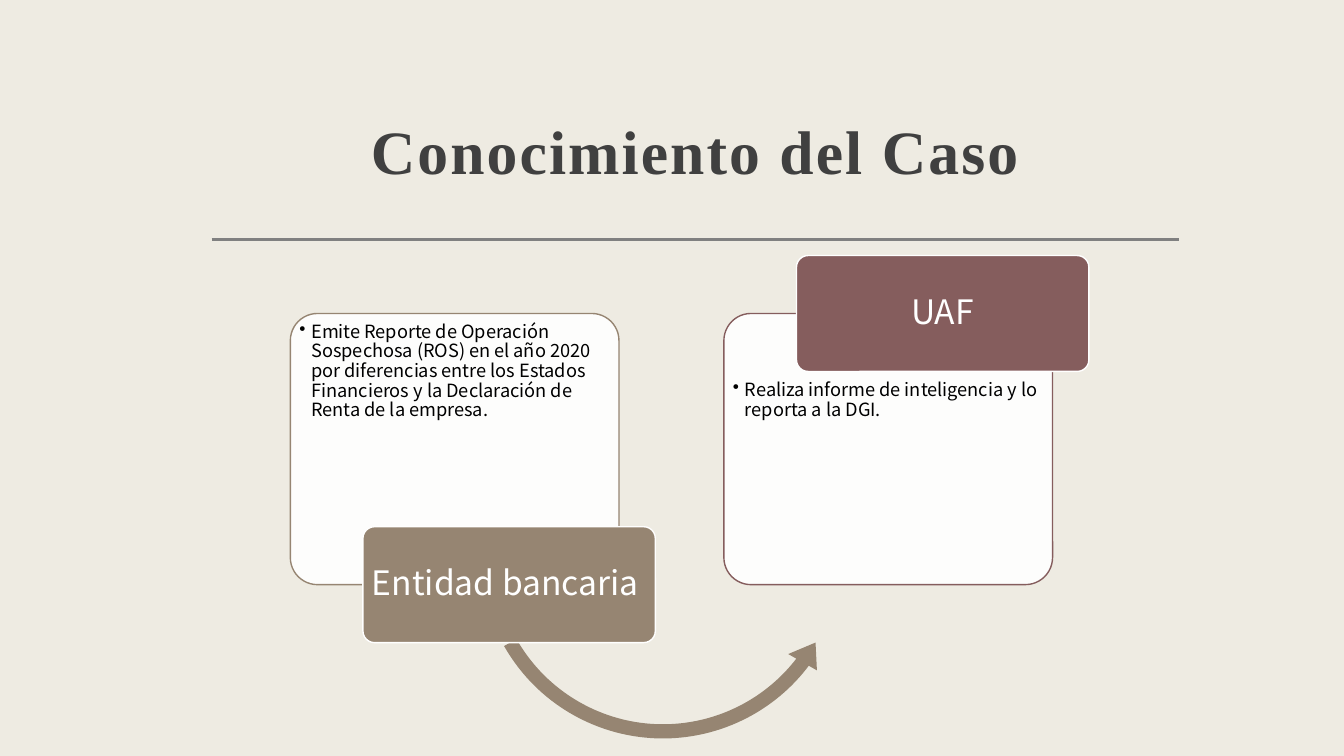
import pptx
import pptx.util
import pptx.dml.color
import pptx.enum.shapes
import pptx.enum.text
import pptx.oxml
import pptx.oxml.ns
import lxml.etree

Inches = pptx.util.Inches
Shape = pptx.enum.shapes.MSO_SHAPE
Align = pptx.enum.text.PP_ALIGN
Anchor = pptx.enum.text.MSO_ANCHOR
BODY_FONT = "Noto Sans CJK JP"
TAUPE, WINE, WHITE = "968572", "855D5D", "FFFFFF"
CARD_WIDTH, CARD_HEIGHT = 3.26, 2.69
LABEL_WIDTH, LABEL_HEIGHT = 2.9, 1.15
LABEL_SHIFT = 0.72


def color(value):
    return pptx.dml.color.RGBColor.from_string(value)


def add_child(parent, tag, **attributes):
    child = lxml.etree.SubElement(parent, pptx.oxml.ns.qn(tag))
    for name, value in attributes.items():
        child.set(name, value)
    return child


def set_frame(frame, margins, anchor):
    frame.word_wrap = True
    frame.auto_size = pptx.enum.text.MSO_AUTO_SIZE.NONE
    frame.vertical_anchor = anchor
    frame.margin_left, frame.margin_top, frame.margin_right, frame.margin_bottom = map(Inches, margins)


def write(frame, text, size, font, value, align, spacing):
    para = frame.paragraphs[0]
    para.alignment = align
    para.line_spacing = spacing
    span = para.add_run()
    span.text = text
    span.font.size = pptx.util.Pt(size)
    span.font.name = font
    span.font.color.rgb = color(value)
    return para, span


def add_box(page, kind, left, top, width, height, fill, line=None):
    box = page.shapes.add_shape(kind, Inches(left), Inches(top), Inches(width), Inches(height))
    box.shadow.inherit = False
    box.fill.solid()
    box.fill.fore_color.rgb = color(fill)
    if line:
        box.line.color.rgb = color(line)
        box.line.width = pptx.util.Pt(1)
    else:
        box.line.fill.background()
    return box


def add_heading(page, left, top, width, height):
    title = page.shapes.title
    title.left, title.top, title.width, title.height = map(Inches, (left, top, width, height))
    set_frame(title.text_frame, (0.12, 0.12, 0.12, 0.1), Anchor.BOTTOM)
    para, span = write(title.text_frame, "Conocimiento del Caso", 44, "Times New Roman",
                       "404040", Align.CENTER, 1.3)
    span.font.bold = True
    span.font._element.set("spc", "150")
    rule_y = Inches(top + 1.9)
    rule = page.shapes.add_connector(pptx.enum.shapes.MSO_CONNECTOR.STRAIGHT,
                                     Inches(left), rule_y, Inches(left + width), rule_y)
    rule.line.color.rgb = color("808080")
    rule.line.width = pptx.util.Pt(2)
    add_child(rule._element.spPr, "a:effectLst")


def add_card(page, left, top, accent, text, text_top):
    card = add_box(page, Shape.ROUNDED_RECTANGLE, left, top, CARD_WIDTH, CARD_HEIGHT, WHITE, accent)
    card.adjustments[0] = 0.1
    fill = card._element.spPr.find(pptx.oxml.ns.qn("a:solidFill"))
    add_child(fill[0], "a:alpha", val="90000")
    set_frame(card.text_frame, (0.01, text_top, 0.01, 0.01), Anchor.TOP)
    para, span = write(card.text_frame, text, 13, BODY_FONT, "000000", Align.LEFT, 0.9)
    properties = para._p.get_or_add_pPr()
    properties.set("marL", str(Inches(0.12)))
    properties.set("indent", str(Inches(-0.12)))
    add_child(properties, "a:buChar", char="•")


def add_label(page, left, top, accent, text):
    label = add_box(page, Shape.ROUNDED_RECTANGLE, left, top, LABEL_WIDTH, LABEL_HEIGHT, accent, WHITE)
    label.adjustments[0] = 0.1
    set_frame(label.text_frame, (0.05, 0.03, 0.05, 0.03), Anchor.MIDDLE)
    write(label.text_frame, text, 24, BODY_FONT, WHITE, Align.CENTER, 0.9)


def add_stage(page, left, top, accent, text, text_top, name, label_edge):
    add_card(page, left, top, accent, text, text_top)
    add_label(page, left + LABEL_SHIFT, top + label_edge - LABEL_HEIGHT / 2, accent, name)


def add_flow_arrow(page, left, top, size):
    arrow = add_box(page, Shape.LEFT_CIRCULAR_ARROW, left, top, size, size, TAUPE)
    for index, value in enumerate((0.037, 4.618, 22.374, 90.245, 0.043)):
        arrow.adjustments[index] = value


def main():
    deck = pptx.Presentation()
    deck.slide_width, deck.slide_height = Inches(13.33), Inches(7.5)
    page = deck.slides.add_slide(deck.slide_layouts[5])
    page.background.fill.solid()
    page.background.fill.fore_color.rgb = color("EEEBE2")
    add_heading(page, 2.1, 0.48, 9.59, 1.47)
    add_flow_arrow(page, 4.67, 3.61, 3.81)
    add_stage(page, 2.88, 3.11, TAUPE,
              "Emite Reporte de Operación Sospechosa (ROS) en el año 2020 por diferencias entre "
              "los Estados Financieros y la Declaración de Renta de la empresa.",
              0.01, "Entidad bancaria ", CARD_HEIGHT)
    add_stage(page, 7.18, 3.11, WINE,
              "Realiza informe de inteligencia y lo reporta a la DGI.",
              0.59, "UAF", 0)
    deck.save("out.pptx")


if __name__ == "__main__":
    main()
